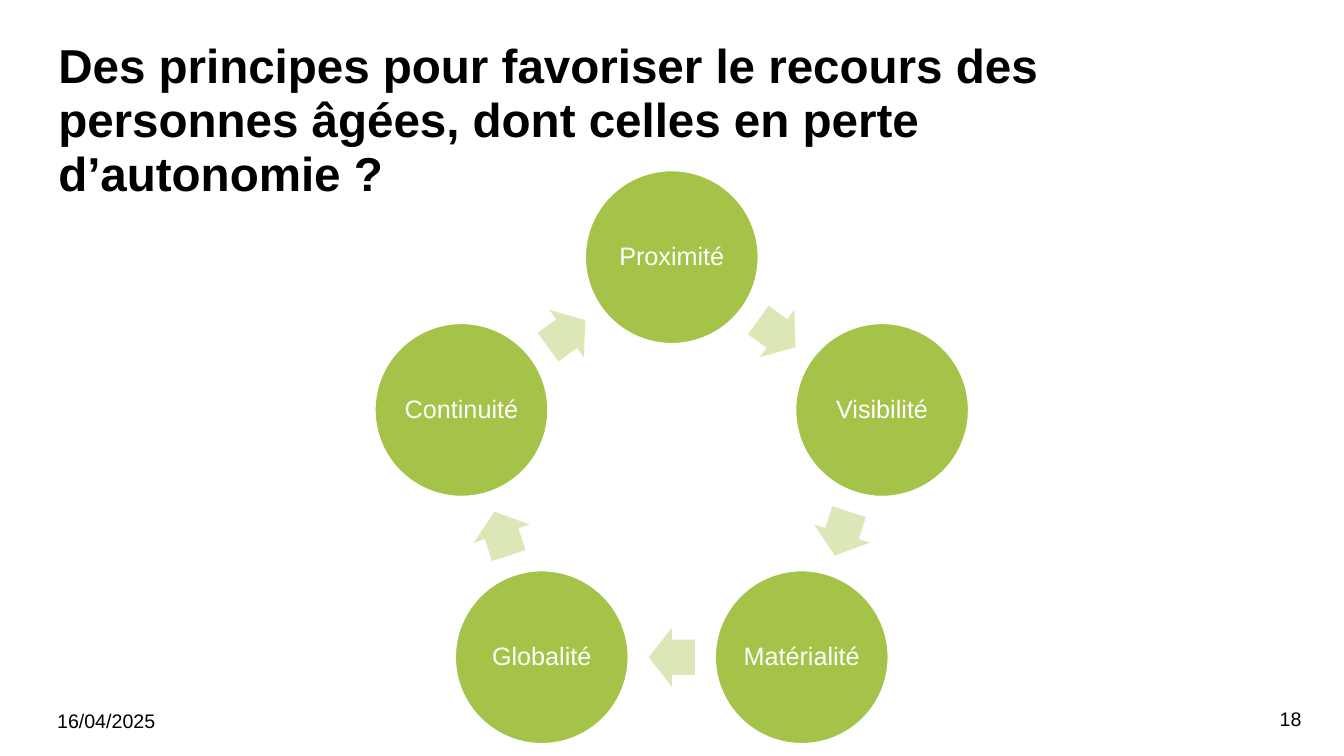
from math import cos, radians, sin

from pptx import Presentation
from pptx.dml.color import RGBColor
from pptx.enum import shapes, text
from pptx.util import Cm, Pt

COLOURS = {"ink": "000000", "paper": "FFFFFF", "circle": "A5C249", "arrow": "DBE7B6"}
PRINCIPLES = ["Proximité", "Visibilité", "Matérialité", "Globalité", "Continuité"]
CIRCLE_SIZE = 4.36
ARROW_LENGTH, ARROW_WIDTH = 1.16, 1.48


def colour(name):
    return RGBColor.from_string(COLOURS[name])


def write(frame, words, size=14, ink="ink", bold=False, align=text.PP_ALIGN.LEFT,
          spacing=1.0, anchor=text.MSO_ANCHOR.TOP, wrap=True):
    frame.word_wrap = wrap
    frame.vertical_anchor = anchor
    paragraph = frame.paragraphs[0]
    paragraph.alignment = align
    paragraph.line_spacing = spacing
    run = paragraph.add_run()
    run.text = words
    run.font.name = "Arial"
    run.font.size = Pt(size)
    run.font.bold = bold
    run.font.color.rgb = colour(ink)


def add_label(slide, box, words, **style):
    label = slide.shapes.add_textbox(*map(Cm, box))
    write(label.text_frame, words, **style)


def add_centred(slide, kind, x, y, width, height, fill):
    """Add a filled preset shape whose middle is at x, y."""
    shape = slide.shapes.add_shape(
        kind, Cm(x - width / 2), Cm(y - height / 2), Cm(width), Cm(height))
    shape.shadow.inherit = False
    shape.fill.solid()
    shape.fill.fore_color.rgb = colour(fill)
    shape.line.fill.background()
    return shape


def add_principle(slide, x, y, name):
    circle = add_centred(slide, shapes.MSO_SHAPE.OVAL, x, y,
                         CIRCLE_SIZE, CIRCLE_SIZE, "circle")
    circle.line.color.rgb = colour("paper")
    circle.line.width = Pt(1)
    frame = circle.text_frame
    frame.margin_left = frame.margin_right = Cm(0.08)
    frame.margin_top = frame.margin_bottom = Cm(0.08)
    write(frame, name, size=18, ink="paper", align=text.PP_ALIGN.CENTER,
          spacing=0.9, anchor=text.MSO_ANCHOR.MIDDLE, wrap=False)


def add_cycle(slide, box, names):
    """Place the circles clockwise from the top of the box, with arrows between."""
    left, top, width, _ = box
    step = 360 / len(names)
    radius = (width - CIRCLE_SIZE) / 2 / sin(radians(step))
    arrow_radius = radius * cos(radians(step / 2))
    middle_x, middle_y = left + width / 2, top + CIRCLE_SIZE / 2 + radius

    def on_ring(angle, distance):
        turn = radians(angle)
        return middle_x + distance * sin(turn), middle_y - distance * cos(turn)

    for index, name in enumerate(names):
        angle = index * step
        add_principle(slide, *on_ring(angle, radius), name)
        arrow_angle = angle + step / 2
        arrow = add_centred(slide, shapes.MSO_SHAPE.RIGHT_ARROW,
                            *on_ring(arrow_angle, arrow_radius),
                            ARROW_LENGTH, ARROW_WIDTH, "arrow")
        arrow.adjustments[0] = 0.6
        arrow.adjustments[1] = 0.5
        arrow.rotation = arrow_angle


def add_footer(slide, box, date, number):
    left, top, width, height = box
    part = 7.62
    add_label(slide, (left, top, part, height), date)
    add_label(slide, (left + width - part, top - 0.03, part, height), number,
              align=text.PP_ALIGN.RIGHT)


def main():
    deck = Presentation()
    deck.slide_width, deck.slide_height = Cm(33.87), Cm(19.05)
    slide = deck.slides.add_slide(deck.slide_layouts[6])
    add_label(slide, (1.22, 0.91, 29.21, 3.68),
              "Des principes pour favoriser le recours des personnes âgées, "
              "dont celles en perte d’autonomie ?",
              size=34, bold=True, spacing=0.94)
    add_footer(slide, (1.19, 17.73, 31.86, 1.02), "16/04/2025", "18")
    add_cycle(slide, (9.45, 4.3, 14.96, 14.44), PRINCIPLES)
    deck.save("out.pptx")


if __name__ == "__main__":
    main()
